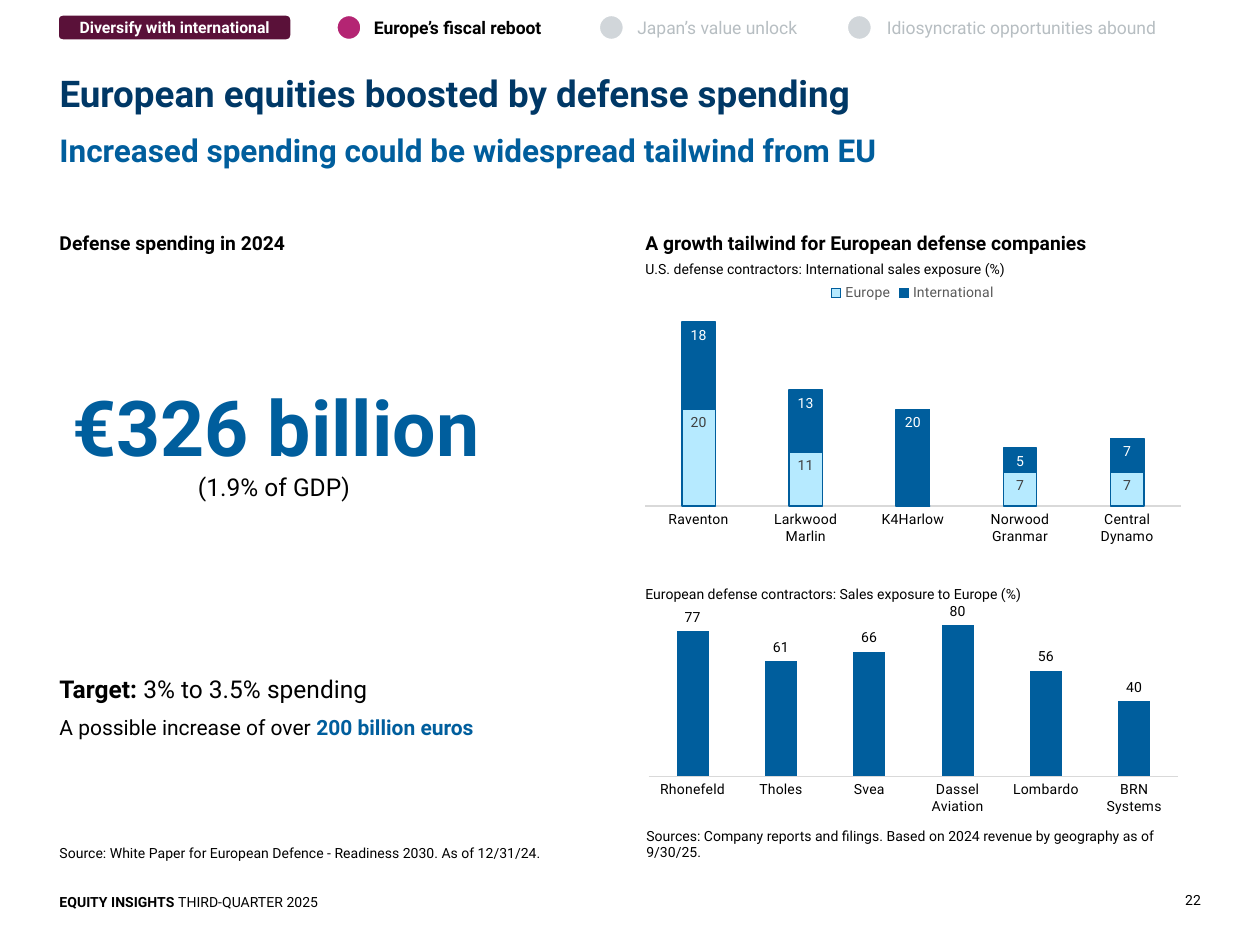
from lxml import etree
from pptx import Presentation
from pptx.chart.data import CategoryChartData
from pptx.dml.color import RGBColor
from pptx.enum.chart import (XL_CHART_TYPE, XL_LABEL_POSITION, XL_LEGEND_POSITION,
                             XL_TICK_LABEL_POSITION, XL_TICK_MARK)
from pptx.enum.shapes import MSO_SHAPE
from pptx.enum.text import MSO_ANCHOR, PP_ALIGN
from pptx.util import Cm, Pt

LEFT, MID, RIGHT = PP_ALIGN.LEFT, PP_ALIGN.CENTER, PP_ALIGN.RIGHT
TOP, CENTRE, BASE = MSO_ANCHOR.TOP, MSO_ANCHOR.MIDDLE, MSO_ANCHOR.BOTTOM
STACKED, CLUSTERED = XL_CHART_TYPE.COLUMN_STACKED, XL_CHART_TYPE.COLUMN_CLUSTERED
IN_END, OUT_END = XL_LABEL_POSITION.INSIDE_END, XL_LABEL_POSITION.OUTSIDE_END
ABOVE, BESIDE = XL_LEGEND_POSITION.TOP, XL_TICK_LABEL_POSITION.NEXT_TO_AXIS
NO_TICK = XL_TICK_MARK.NONE
PILL, DISC = MSO_SHAPE.ROUNDED_RECTANGLE, MSO_SHAPE.OVAL

FONT = "Roboto"
HUES = {"navy": "003866", "blue": "005E9D", "sky": "B6EAFF", "black": "000000",
        "white": "FFFFFF", "plum": "5A1139", "pink": "B42573", "dot": "D1D6DA",
        "mute": "B7BEC2", "rule": "D9D9D9", "dark": "404040", "grey": "595959"}
COL1, COL2 = 1.2, 13.01

TITLE = "European equities boosted by defense spending"
TAG = "Diversify with international"
# label, dot left, text left, text width, active
STEPS = [
    ("Europe’s fiscal reboot", 6.78, 7.54, 3.9, True),
    ("Japan’s value unlock", 12.07, 12.85, 4.42, False),
    ("Idiosyncratic opportunities abound", 17.07, 17.88, 5.95, False),
]
# place (left, top, width, height), runs (text, bold, colour), size, options
TEXTS = [
    ((COL1, 2.64, 23.01, 1.57),
     [("Increased spending could be widespread tailwind from EU", True, "blue")], 18, {}),
    ((COL1, 4.66, 11.13, 0.48), [("Defense spending in 2024", True, "black")], 11, {}),
    ((COL2, 4.66, 11.13, 0.48),
     [("A growth tailwind for European defense companies", True, "black")], 11, {}),
    ((COL2, 5.26, 8.92, 0.33),
     [("U.S. defense contractors: International sales exposure (%)", False, "black")], 8, {}),
    ((COL2, 11.81, 11.13, 0.33),
     [("European defense contractors: Sales exposure to Europe (%)", False, "black")], 8, {}),
    ((0.94, 7.65, 9.25, 1.88), [("€326 billion", True, "blue")], 44, {"align": MID}),
    ((1.17, 9.52, 8.71, 0.61), [("(1.9% of GDP)", False, "black")], 14, {"align": MID}),
    ((COL1, 13.59, 8.33, 0.61),
     [("Target: ", True, "black"), ("3% to 3.5% spending", False, "black")], 14, {}),
    ((COL1, 14.4, 10.87, 0.51),
     [("A possible increase of over ", False, "black"),
      ("200 billion euros", True, "blue")], 12, {}),
    ((COL1, 15.54, 11.2, 1.83),
     [("Source: White Paper for European Defence - Readiness 2030. As of 12/31/24.",
       False, "black")], 8, {"anchor": BASE, "line": Pt(6.8), "after": 2.2}),
    ((13.03, 16.84, 11.2, 0.51),
     [("Sources: Company reports and filings. Based on 2024 revenue by geography "
       "as of 9/30/25.", False, "black")], 8, {"anchor": BASE, "after": 2.2}),
    ((COL1, 18.01, 15.62, 0.33),
     [("EQUITY INSIGHTS ", True, "black"), ("THIRD-QUARTER 2025", False, "black")], 8, {}),
    ((22.74, 17.96, 1.47, 0.36), [("22", False, "black")], 8,
     {"align": RIGHT, "anchor": BASE, "line": 1.1}),
]
# series: name, values, fill, outline, label colour; plot: x, y, w, h as shares
CHARTS = [
    {"kind": STACKED, "place": (12.78, 5.45, 11.25, 5.66), "gap": 219, "lap": 100,
     "top": 0.4, "plot": (0.02, 0.15, 0.96, 0.69), "labels": IN_END, "legend": True,
     "cats": ["Raventon", "Larkwood Marlin", "K4Harlow", "Norwood Granmar",
              "Central Dynamo"],
     "series": [("Europe", [0.2, 0.11, 0, 0.07, 0.07], "sky", "blue", "dark"),
                ("International", [0.18, 0.13, 0.2, 0.05, 0.07], "blue", "blue", "white")]},
    {"kind": CLUSTERED, "place": (12.85, 12.14, 11.13, 4.39), "gap": 175, "lap": -27,
     "top": 0.9, "plot": (0.02, 0.02, 0.96, 0.78), "labels": OUT_END, "legend": False,
     "cats": ["Rhonefeld", "Tholes", "Svea", "Dassel Aviation", "Lombardo",
              "BRN Systems"],
     "series": [("Series 1", [0.77, 0.61, 0.66, 0.8, 0.56, 0.4], "blue", None, "black")]},
]


def rgb(hue):
    return RGBColor.from_string(HUES[hue])


def style(font, size, hue, bold=False):
    font.name, font.size, font.bold = FONT, Pt(size), bold
    font.color.rgb = rgb(hue)


def write(shape, runs, size, align=LEFT, anchor=TOP, line=None, after=0, pad=0):
    frame = shape.text_frame
    frame.word_wrap = True
    frame.vertical_anchor = anchor
    frame.margin_left = frame.margin_right = Cm(pad)
    frame.margin_top = frame.margin_bottom = 0
    para = frame.paragraphs[0]
    para.alignment, para.line_spacing, para.space_after = align, line, Pt(after)
    style(para.font, size, runs[0][2], runs[0][1])
    for text, bold, hue in runs:
        run = para.add_run()
        run.text = text
        if (bold, hue) != runs[0][1:]:
            run.font.bold = bold
            run.font.color.rgb = rgb(hue)


def add_text(slide, place, runs, size, **opts):
    write(slide.shapes.add_textbox(*map(Cm, place)), runs, size, **opts)


def add_form(slide, kind, place, hue, width):
    form = slide.shapes.add_shape(kind, *map(Cm, place))
    form.shadow.inherit = False
    form.fill.solid()
    form.fill.fore_color.rgb = rgb(hue)
    form.line.color.rgb = rgb("white")
    form.line.width = Pt(width)
    return form


def set_plot(chart, shares):
    """Fix the inner plot area at x, y, w, h shares of the chart."""
    area = chart.plots[0]._element.getparent()
    space = "{" + area.nsmap["c"] + "}"
    for old in area.findall(space + "layout"):
        area.remove(old)
    layout = etree.Element(space + "layout")
    area.insert(0, layout)
    manual = etree.SubElement(layout, space + "manualLayout")
    parts = [("layoutTarget", "inner"), ("xMode", "edge"), ("yMode", "edge")]
    for name, val in parts + list(zip("xywh", shares)):
        etree.SubElement(manual, space + name).set("val", str(val))


def add_labels(series, vals, place, hue):
    """Label each bar in percent points, without the sign; zero stays blank."""
    labels = series.data_labels
    labels.show_value = True
    labels.position = place
    labels.number_format, labels.number_format_is_linked = "0%;-0%;", False
    style(labels.font, 8, hue)
    for i, val in enumerate(vals):
        if val:
            label = series.points[i].data_label
            label.text_frame.text = f"{val * 100:.0f}"
            style(label.text_frame.paragraphs[0].font, 8, hue)
            label.position = place


def add_bars(slide, item):
    data = CategoryChartData(number_format="0%")
    data.categories = item["cats"]
    for name, vals, *_ in item["series"]:
        data.add_series(name, vals)
    chart = slide.shapes.add_chart(item["kind"], *map(Cm, item["place"]), data).chart
    style(chart.font, 8, "black")
    chart.has_title = False
    chart.has_legend = item["legend"]
    if item["legend"]:
        chart.legend.position = ABOVE
        chart.legend.include_in_layout = False
        style(chart.legend.font, 8, "grey")
    axis = chart.category_axis
    axis.major_tick_mark = NO_TICK
    axis.tick_label_position = BESIDE
    axis.tick_labels.offset = 0
    axis.format.line.color.rgb = rgb("rule")
    axis.format.line.width = Pt(0.75)
    style(axis.tick_labels.font, 8, "black")
    scale = chart.value_axis
    scale.minimum_scale, scale.maximum_scale = 0, item["top"]
    scale.has_major_gridlines = scale.visible = False
    plot = chart.plots[0]
    plot.gap_width, plot.overlap = item["gap"], item["lap"]
    plot.vary_by_categories = False
    for series, (_, vals, fill, edge, ink) in zip(plot.series, item["series"]):
        series.format.fill.solid()
        series.format.fill.fore_color.rgb = rgb(fill)
        if edge:
            series.format.line.color.rgb = rgb(edge)
            series.format.line.width = Pt(0.75)
        add_labels(series, vals, item["labels"], ink)
    set_plot(chart, item["plot"])


def main():
    deck = Presentation()
    deck.slide_width, deck.slide_height = Cm(25.4), Cm(19.05)
    slide = deck.slides.add_slide(deck.slide_layouts[5])
    title = slide.shapes.title
    title.left, title.top, title.width, title.height = map(Cm, (COL1, 0.05, 23.01, 2.29))
    write(title, [(TITLE, True, "navy")], 21, anchor=BASE, line=0.95)

    tag = add_form(slide, PILL, (1.17, 0.3, 4.7, 0.51), "plum", 1)
    tag.adjustments[0] = 0.18
    write(tag, [(TAG, True, "white")], 9, align=MID, anchor=CENTRE, pad=0.25)
    for label, dot, left, width, live in STEPS:
        add_form(slide, DISC, (dot, 0.3, 0.51, 0.51), "pink" if live else "dot", 1.5)
        add_text(slide, (left, 0.35, width, 0.43),
                 [(label, live, "black" if live else "mute")], 10)

    for item in CHARTS:
        add_bars(slide, item)
    for place, runs, size, opts in TEXTS:
        add_text(slide, place, runs, size, **opts)
    deck.save("out.pptx")


if __name__ == "__main__":
    main()
